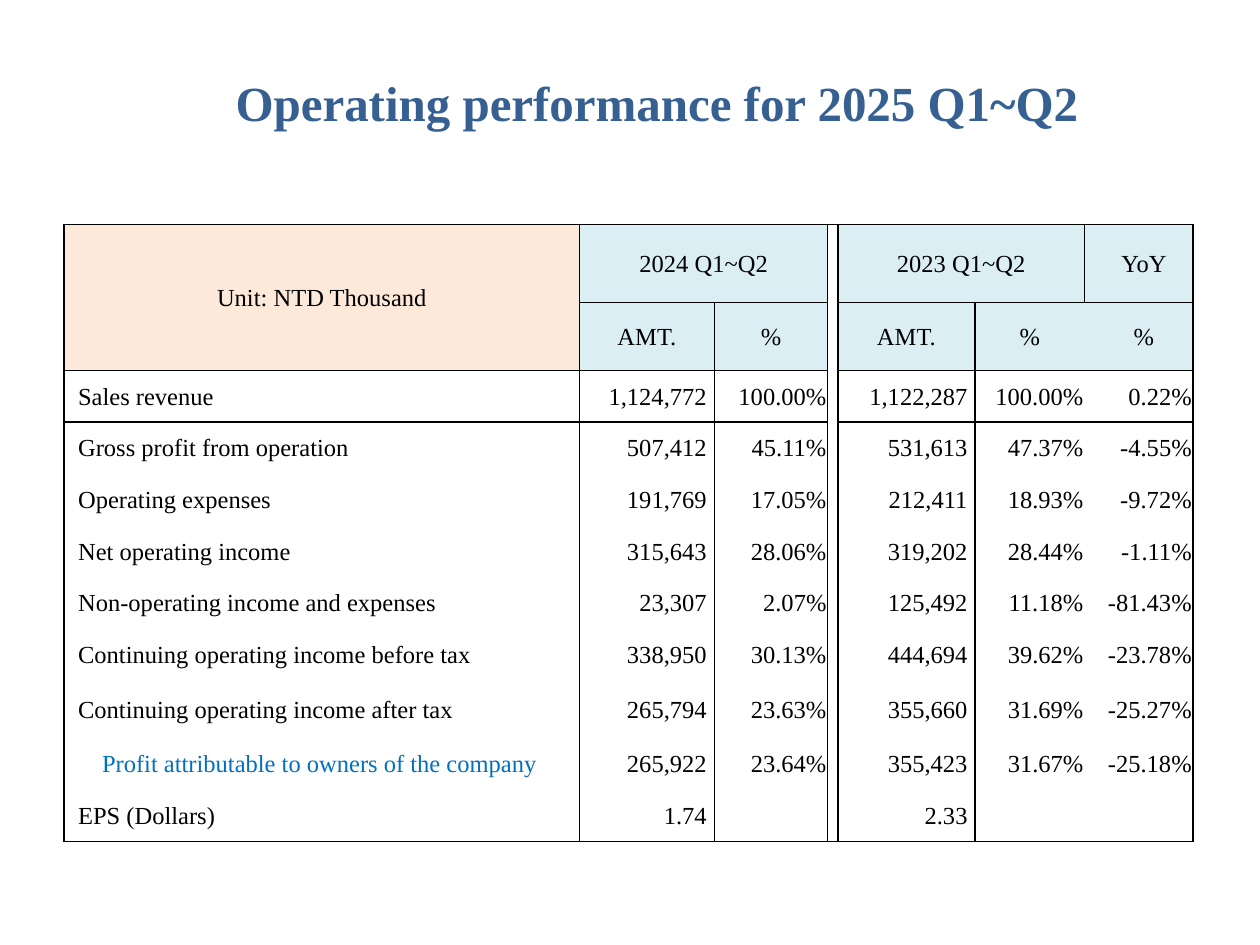
from lxml.etree import SubElement
from pptx import Presentation
from pptx.dml.color import RGBColor
from pptx.enum.text import MSO_ANCHOR, PP_ALIGN
from pptx.oxml.ns import qn
from pptx.util import Inches, Pt

FONT = "Times New Roman"
BLACK, NAVY, BLUE = "000000", "376092", "0070C0"
PEACH, PALE_BLUE = "FDE9D9", "DBEEF3"
NO_STYLE = "{2D5ABB26-0587-4C30-8999-92F81FD0307C}"

COLUMN_WIDTHS = [4.09, 1.07, 0.9, 0.08, 1.09, 0.87, 0.08, 0.78]
ROW_HEIGHTS = [0.62, 0.54] + [0.41] * 6 + [0.46, 0.41, 0.41]
GAP_COLUMN = 3
AMOUNT_COLUMNS = (1, 4)
VALUE_COLUMNS = (1, 2, 4, 5, 7)
VERTICAL_EDGES = (0, 1, 3, 4, 8)
HEADER_EDGES = (0, 1, 2, 11)
GAP_EDGES = (0, 11)

HEADERS = {
    (0, 0): "Unit: NTD Thousand",
    (0, 1): "2024 Q1~Q2",
    (0, 4): "2023 Q1~Q2",
    (0, 7): "YoY",
    (1, 1): "AMT.",
    (1, 2): "%",
    (1, 4): "AMT.",
    (1, 5): "%",
    (1, 7): "%",
}
OWNERS = "Profit attributable to owners of the company"
RESULTS = [
    ("Sales revenue", "1,124,772", "100.00%", "1,122,287", "100.00%", "0.22%"),
    ("Gross profit from operation", "507,412", "45.11%", "531,613", "47.37%", "-4.55%"),
    ("Operating expenses", "191,769", "17.05%", "212,411", "18.93%", "-9.72%"),
    ("Net operating income", "315,643", "28.06%", "319,202", "28.44%", "-1.11%"),
    ("Non-operating income and expenses", "23,307", "2.07%", "125,492", "11.18%", "-81.43%"),
    ("Continuing operating income before tax", "338,950", "30.13%", "444,694", "39.62%", "-23.78%"),
    ("Continuing operating income after tax", "265,794", "23.63%", "355,660", "31.69%", "-25.27%"),
    (OWNERS, "265,922", "23.64%", "355,423", "31.67%", "-25.18%"),
    ("EPS (Dollars)", "1.74", "", "2.33", "", ""),
]


def color(value):
    return RGBColor.from_string(value)


def add_text(para, text, size, fill, align, bold=False):
    para.alignment = align
    para.font.size = Pt(size)
    if text:
        span = para.add_run()
        span.text = text
        span.font.name = FONT
        span.font.size = Pt(size)
        span.font.bold = bold
        span.font.color.rgb = color(fill)


def add_title(page, text):
    title = page.shapes.title
    title.left, title.top = Inches(1.77), Inches(0.52)
    title.width, title.height = Inches(7.4), Inches(0.57)
    title.text_frame.vertical_anchor = MSO_ANCHOR.MIDDLE
    add_text(title.text_frame.paragraphs[0], text, 28, NAVY, PP_ALIGN.LEFT, bold=True)


def add_border(cell, side):
    line = SubElement(cell._tc.get_or_add_tcPr(), qn(f"a:{side}"), w=str(Pt(1)))
    SubElement(SubElement(line, qn("a:solidFill")), qn("a:srgbClr"), val=BLACK)


def format_cell(cell, row, column):
    horizontal_edges = GAP_EDGES if column == GAP_COLUMN else HEADER_EDGES
    sides = [
        ("lnL", column in VERTICAL_EDGES),
        ("lnR", column + 1 in VERTICAL_EDGES),
        ("lnT", row in horizontal_edges),
        ("lnB", row + 1 in horizontal_edges),
    ]
    for side, drawn in sides:
        if drawn:
            add_border(cell, side)
    if row < 2 and column != GAP_COLUMN:
        cell.fill.solid()
        cell.fill.fore_color.rgb = color(PEACH if column == 0 else PALE_BLUE)
    else:
        cell.fill.background()
    cell.margin_left = cell.margin_right = cell.margin_top = Inches(0.01)
    cell.margin_bottom = 0
    cell.vertical_anchor = MSO_ANCHOR.MIDDLE


def fill_cell(cell, row, column, text):
    fill, align = BLACK, PP_ALIGN.RIGHT
    if row < 2:
        align = PP_ALIGN.CENTER
    elif column == 0:
        align = PP_ALIGN.LEFT
        cell.margin_left = Inches(0.3 if text == OWNERS else 0.11)
        fill = BLUE if text == OWNERS else BLACK
    elif column in AMOUNT_COLUMNS:
        cell.margin_right = Inches(0.06)
    add_text(cell.text_frame.paragraphs[0], text, 14, fill, align)


def table_texts():
    texts = dict(HEADERS)
    for row, result in enumerate(RESULTS, start=2):
        for column, text in zip((0,) + VALUE_COLUMNS, result):
            texts[row, column] = text
    return texts


def add_results_table(page):
    frame = page.shapes.add_table(
        len(ROW_HEIGHTS), len(COLUMN_WIDTHS), Inches(0.51), Inches(1.78),
        Inches(sum(COLUMN_WIDTHS)), Inches(sum(ROW_HEIGHTS)))
    table = frame.table
    table.first_row = table.horz_banding = False
    table._tbl.tblPr.find(qn("a:tableStyleId")).text = NO_STYLE
    for column, width in zip(table.columns, COLUMN_WIDTHS):
        column.width = Inches(width)
    for row, height in zip(table.rows, ROW_HEIGHTS):
        row.height = Inches(height)
    texts = table_texts()
    for row in range(len(ROW_HEIGHTS)):
        for column in range(len(COLUMN_WIDTHS)):
            cell = table.cell(row, column)
            format_cell(cell, row, column)
            fill_cell(cell, row, column, texts.get((row, column), ""))
    table.cell(0, 0).merge(table.cell(1, 0))
    for column in AMOUNT_COLUMNS:
        table.cell(0, column).merge(table.cell(0, column + 1))


def main():
    deck = Presentation()
    deck.slide_width, deck.slide_height = Inches(10), Inches(7.5)
    page = deck.slides.add_slide(deck.slide_layouts[5])
    add_title(page, "Operating performance for 2025 Q1~Q2")
    add_results_table(page)
    deck.save("out.pptx")


if __name__ == "__main__":
    main()
